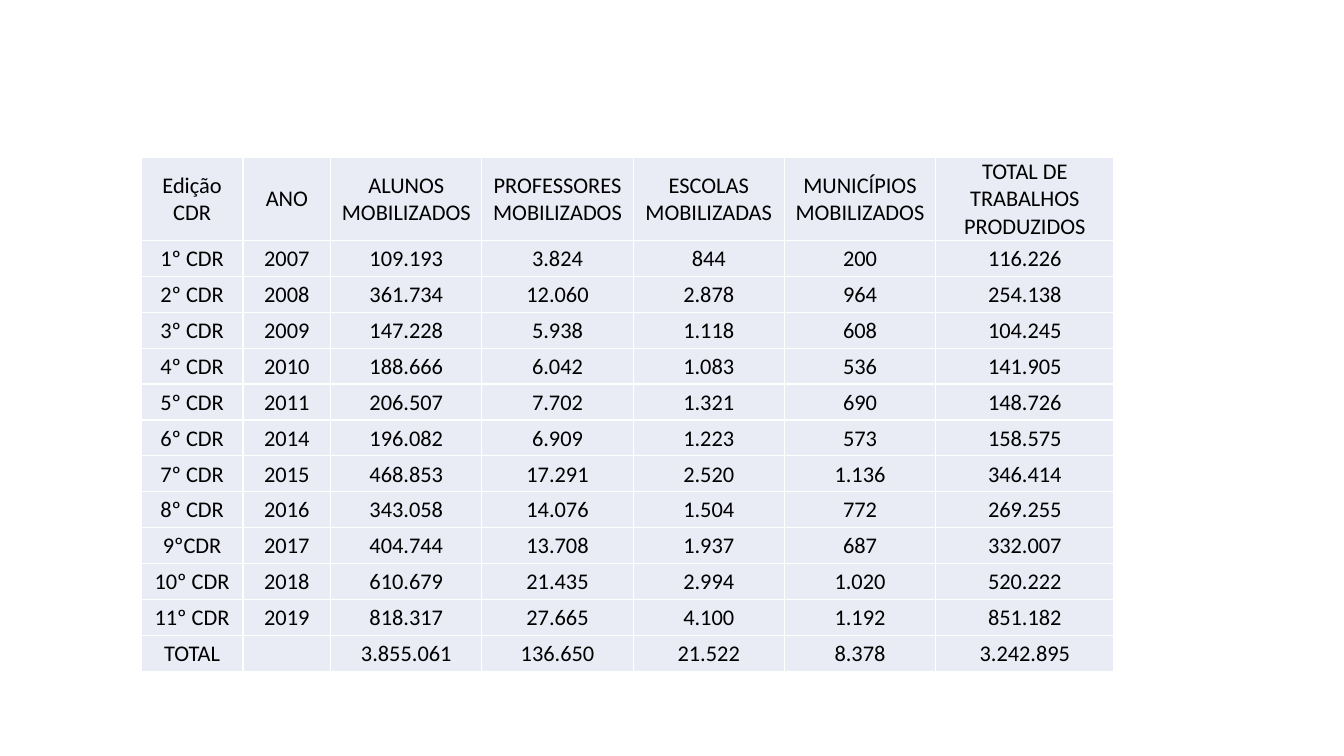
from dataclasses import astuple, dataclass

from lxml.etree import SubElement
from pptx import Presentation
from pptx.dml.color import RGBColor
from pptx.enum.text import MSO_ANCHOR, PP_ALIGN
from pptx.oxml.ns import qn
from pptx.slide import Slide
from pptx.table import _Cell
from pptx.text.text import TextFrame
from pptx.util import Inches, Pt

CELL_FILL = "E9EBF5"
BORDER_COLOR = "FFFFFF"
TEXT_COLOR = "000000"
TABLE_LEFT, TABLE_TOP = 1.4, 1.56
COLUMN_WIDTHS = [1.01, 0.87, 1.5, 1.5, 1.5, 1.5, 1.77]
HEADER_HEIGHT = 0.61
BODY_HEIGHT = 4.28


@dataclass
class Edition:
    name: str
    year: str
    students: str
    teachers: str
    schools: str
    municipalities: str
    works: str


HEADER = Edition(
    "Edição CDR", "ANO", "ALUNOS MOBILIZADOS", "PROFESSORES MOBILIZADOS",
    "ESCOLAS MOBILIZADAS", "MUNICÍPIOS MOBILIZADOS", "TOTAL DE TRABALHOS PRODUZIDOS",
)
EDITIONS = [
    Edition("1º CDR", "2007", "109.193", "3.824", "844", "200", "116.226"),
    Edition("2º CDR", "2008", "361.734", "12.060", "2.878", "964", "254.138"),
    Edition("3º CDR", "2009", "147.228", "5.938", "1.118", "608", "104.245"),
    Edition("4º CDR", "2010", "188.666", "6.042", "1.083", "536", "141.905"),
    Edition("5º CDR", "2011", "206.507", "7.702", "1.321", "690", "148.726"),
    Edition("6º CDR", "2014", "196.082", "6.909", "1.223", "573", "158.575"),
    Edition("7º CDR", "2015", "468.853", "17.291", "2.520", "1.136", "346.414"),
    Edition("8º CDR", "2016", "343.058", "14.076", "1.504", "772", "269.255"),
    Edition("9ºCDR", "2017", "404.744", "13.708", "1.937", "687", "332.007"),
    Edition("10º CDR", "2018", "610.679", "21.435", "2.994", "1.020", "520.222"),
    Edition("11º CDR", "2019", "818.317", "27.665", "4.100", "1.192", "851.182"),
    Edition("TOTAL", "", "3.855.061", "136.650", "21.522", "8.378", "3.242.895"),
]


def color(value: str) -> RGBColor:
    return RGBColor.from_string(value)


def write_text(frame: TextFrame, text: str, *, size: float = 16, font: str = "Calibri",
               fill: str = TEXT_COLOR, align: PP_ALIGN = PP_ALIGN.CENTER) -> None:
    paragraph = frame.paragraphs[0]
    paragraph.alignment = align
    if not text:
        paragraph.font.size = Pt(size)
        return
    run = paragraph.add_run()
    run.text = text
    run.font.size = Pt(size)
    run.font.name = font
    run.font.color.rgb = color(fill)


def add_borders(cell: _Cell, *, line_color: str, width: float) -> None:
    properties = cell._tc.get_or_add_tcPr()
    for side in ("a:lnL", "a:lnR", "a:lnT", "a:lnB"):
        line = SubElement(properties, qn(side), w=str(Pt(width)))
        solid_fill = SubElement(line, qn("a:solidFill"))
        SubElement(solid_fill, qn("a:srgbClr"), val=line_color)


def format_cell(cell: _Cell) -> None:
    cell.vertical_anchor = MSO_ANCHOR.MIDDLE
    cell.margin_left = cell.margin_top = cell.margin_right = Inches(0.01)
    cell.margin_bottom = Inches(0)
    add_borders(cell, line_color=BORDER_COLOR, width=1)
    cell.fill.solid()
    cell.fill.fore_color.rgb = color(CELL_FILL)


def add_editions_table(slide: Slide, editions: list[Edition]) -> None:
    records = [HEADER, *editions]
    table = slide.shapes.add_table(
        len(records), len(COLUMN_WIDTHS), Inches(TABLE_LEFT), Inches(TABLE_TOP),
        Inches(sum(COLUMN_WIDTHS)), Inches(HEADER_HEIGHT + BODY_HEIGHT),
    ).table
    table.horz_banding = False
    table.first_row = False
    for column, width in zip(table.columns, COLUMN_WIDTHS):
        column.width = Inches(width)
    for row, record in zip(table.rows, records):
        row.height = Inches(HEADER_HEIGHT if record is HEADER else BODY_HEIGHT / len(editions))
        for cell, text in zip(row.cells, astuple(record)):
            format_cell(cell)
            write_text(cell.text_frame, text)


def main() -> None:
    presentation = Presentation()
    presentation.slide_width = Inches(13.33)
    presentation.slide_height = Inches(7.5)
    slide = presentation.slides.add_slide(presentation.slide_layouts[6])
    add_editions_table(slide, EDITIONS)
    presentation.save("out.pptx")


if __name__ == "__main__":
    main()
